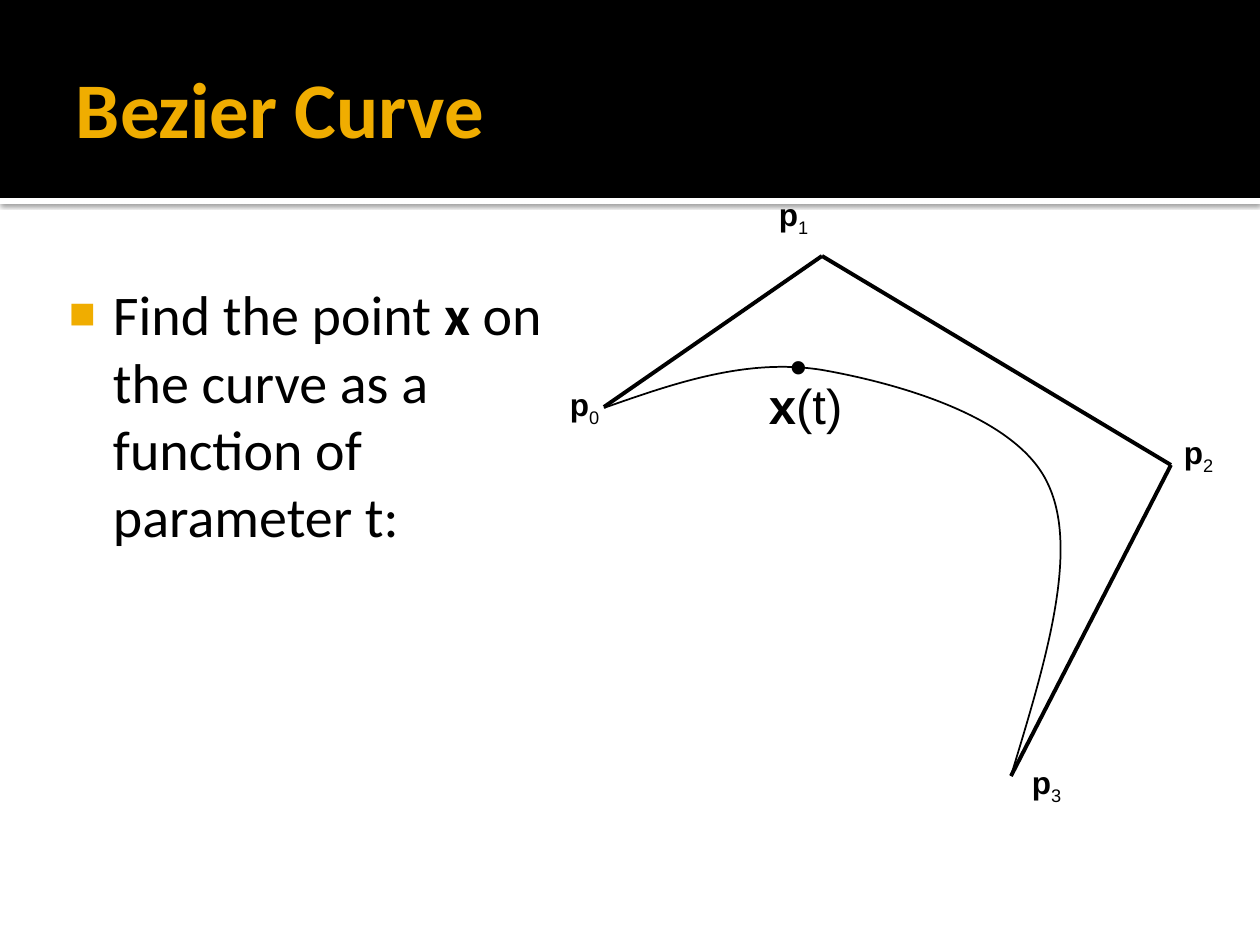
"""Build a slide about finding a point on a cubic Bezier curve."""
import dataclasses

import lxml.etree
import pptx
import pptx.dml.color
import pptx.enum.shapes
import pptx.enum.text
import pptx.oxml
import pptx.oxml.ns
import pptx.util

PX = 914400 / 126
W, H = 1260, 945


@dataclasses.dataclass(frozen=True)
class Theme:
    ink: str = "000000"
    paper: str = "FFFFFF"
    accent: str = "F0AD00"
    heading: str = "Calibri"
    label: str = "Arial"
    title_size: int = 45
    body_size: int = 32
    point_size: int = 28
    label_size: int = 18


def emu(px):
    return pptx.util.Emu(round(px * PX))


def rgb(color):
    return pptx.dml.color.RGBColor.from_string(color)


def xml(tag, **attrs):
    el = pptx.oxml.parse_xml(f'<a:{tag} {pptx.oxml.ns.nsdecls("a")}/>')
    for name, value in attrs.items():
        el.set(name, str(value))
    return el


class Deck:
    def __init__(self, theme):
        self.theme = theme
        self.prs = pptx.Presentation()
        self.prs.slide_width, self.prs.slide_height = emu(W), emu(H)
        self.s = self.prs.slides.add_slide(self.prs.slide_layouts[6])

    def band(self, top, height, color, shadow=False):
        kind = pptx.enum.shapes.MSO_SHAPE.RECTANGLE
        sp = self.s.shapes.add_shape(kind, 0, emu(top), emu(W), emu(height))
        sp.fill.solid()
        sp.fill.fore_color.rgb = rgb(color)
        sp.line.fill.background()
        sp.shadow.inherit = False
        if shadow:
            outer = xml("outerShdw", blurRad=31750, dist=10160, dir=5400000,
                        algn="tl", rotWithShape=0)
            tint = xml("srgbClr", val=self.theme.ink)
            tint.append(xml("alpha", val=60000))
            outer.append(tint)
            sp.element.spPr.find(pptx.oxml.ns.qn("a:effectLst")).append(outer)

    def text(self, box, runs, size, font, color=None, wrap=True, grow=False,
             middle=False, insets=(13, 6, 13, 6)):
        sp = self.s.shapes.add_textbox(*map(emu, box))
        tf = sp.text_frame
        tf.word_wrap = wrap
        fit = pptx.enum.text.MSO_AUTO_SIZE
        tf.auto_size = fit.SHAPE_TO_FIT_TEXT if grow else fit.NONE
        anchor = pptx.enum.text.MSO_ANCHOR
        tf.vertical_anchor = anchor.MIDDLE if middle else anchor.TOP
        (tf.margin_left, tf.margin_top,
         tf.margin_right, tf.margin_bottom) = map(emu, insets)
        p = tf.paragraphs[0]
        for words, bold, *base in runs:
            r = p.add_run()
            r.text = words
            r.font.size = pptx.util.Pt(size)
            r.font.name = font
            r.font.bold = bold
            r.font.color.rgb = rgb(color or self.theme.ink)
            if base:
                r.font._element.set("baseline", str(base[0] * 1000))
        return p

    def bullet(self, p, indent, hang):
        pPr = p._p.get_or_add_pPr()
        pPr.set("marL", str(emu(indent)))
        pPr.set("indent", str(emu(-hang)))
        tint = xml("buClr")
        tint.append(xml("srgbClr", val=self.theme.accent))
        for el in (tint, xml("buSzPct", val=80000),
                   xml("buFont", typeface=self.theme.label), xml("buChar", char="■")):
            pPr.append(el)

    def line(self, start, end, width):
        kind = pptx.enum.shapes.MSO_CONNECTOR.STRAIGHT
        sp = self.s.shapes.add_connector(kind, *map(emu, start + end))
        sp.line.width = pptx.util.Pt(width)
        sp.line.color.rgb = rgb(self.theme.ink)
        sp.element.spPr.append(xml("effectLst"))

    def curve(self, points, width):
        start, *rest = points
        fb = self.s.shapes.build_freeform(*start, scale=PX)
        fb.add_line_segments(rest, close=False)
        sp = fb.convert_to_shape()
        outline = sp.element.find(".//" + pptx.oxml.ns.qn("a:path"))
        segments = outline.findall(pptx.oxml.ns.qn("a:lnTo"))
        for i in range(0, len(segments), 3):
            cubic = xml("cubicBezTo")
            for seg in segments[i:i + 3]:
                cubic.append(seg[0])
                outline.remove(seg)
            outline.append(cubic)
        sp.fill.background()
        sp.line.width = pptx.util.Pt(width)
        sp.line.color.rgb = rgb(self.theme.ink)
        sp.shadow.inherit = False


def main():
    t = Theme()
    d = Deck(t)
    d.band(198, 6, t.paper, shadow=True)
    d.band(0, 198, t.ink)
    d.text((63, 21, 1134, 173), [("Bezier Curve", True)], t.title_size,
           t.heading, t.accent, middle=True, insets=(13, 6, 6, 6))

    polygon = [(604, 407), (822, 256), (1171, 465), (1011, 776)]
    for start, end in zip(polygon, polygon[1:]):
        d.line(start, end, 2.25)
    corners = [(557, 379), (766, 189), (1171, 427), (1019, 757)]
    for i, corner in enumerate(corners):
        d.text(corner + (63, 63), [("p", True), (str(i), False, -25)],
               t.label_size, t.label, wrap=False, grow=True)

    p = d.text((45, 267, 543, 567),
               [("Find the point ", False), ("x", True),
                (" on the curve as a function of parameter t:", False)],
               t.body_size, t.heading, insets=(8, 13, 13, 6))
    d.bullet(p, 60, 44)

    d.curve([(604, 408), (675, 383), (747, 358), (822, 370),
             (896, 383), (1017, 416), (1048, 484),
             (1080, 551), (1045, 664), (1011, 776)], 1)
    d.text((756, 369, 103, 72), [("x", True), ("(t)", False)],
           t.point_size, t.label, grow=True)
    d.text((777, 329, 43, 72), [("•", False)], t.point_size, t.label,
           wrap=False, grow=True)
    d.prs.save("out.pptx")


if __name__ == "__main__":
    main()
